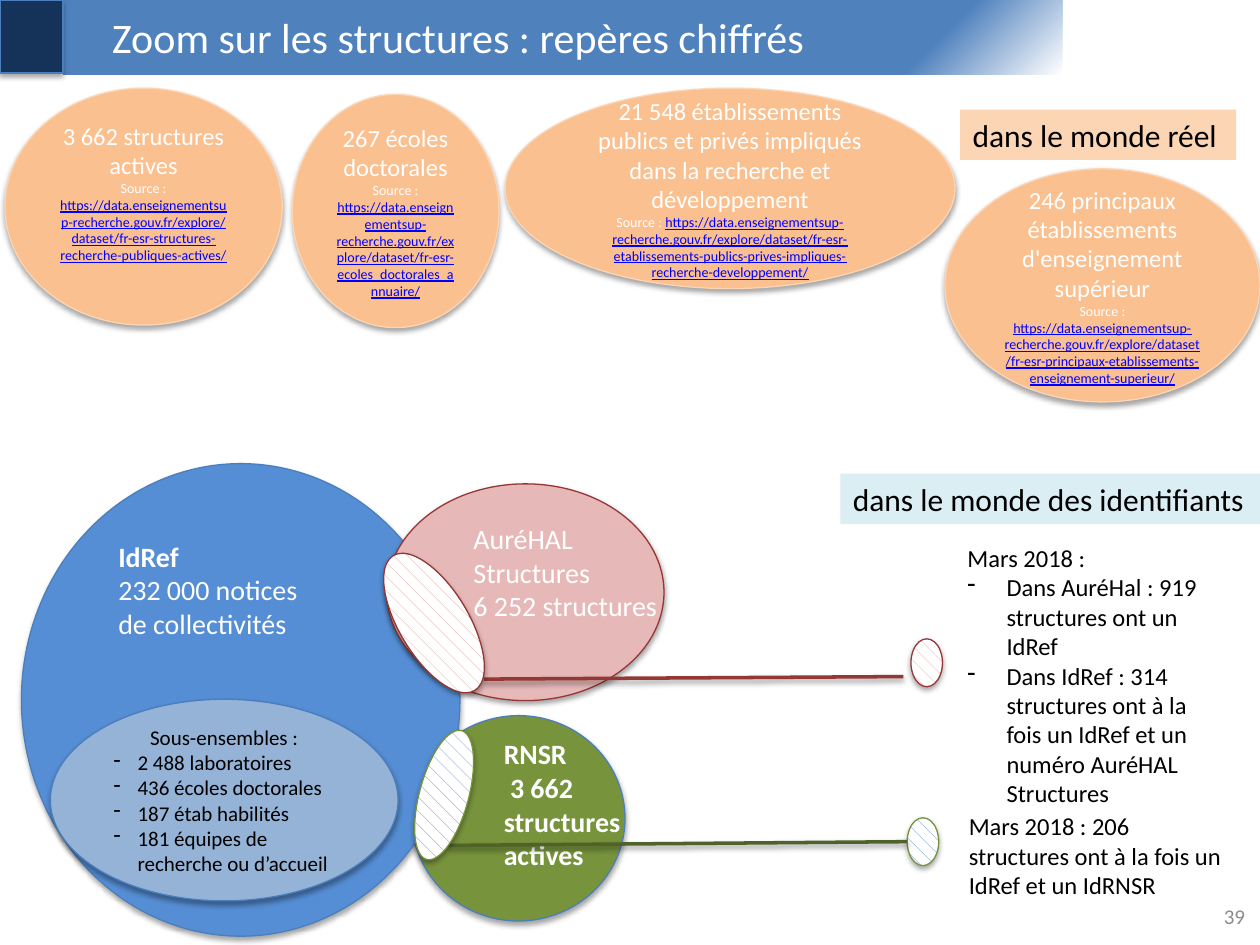
"""Build the slide on research structures: real-world counts against identifier counts."""
from dataclasses import dataclass

from lxml.etree import SubElement
from pptx import Presentation
from pptx.dml.color import RGBColor
from pptx.enum.dml import MSO_PATTERN
from pptx.enum.shapes import MSO_CONNECTOR, MSO_SHAPE
from pptx.enum.text import MSO_ANCHOR, PP_ALIGN
from pptx.oxml.ns import qn
from pptx.util import Inches, Pt


@dataclass(frozen=True)
class Theme:
    font: str = "Calibri"
    white: str = "FFFFFF"
    black: str = "000000"
    grey: str = "8C8C8C"
    link: str = "0000FF"
    navy: str = "153258"
    title: str = "4F81BD"
    outline: str = "4B7EBC"
    orange: str = "FAC090"
    peach: str = "FCD5B5"
    aqua: str = "DBEEF4"
    blue: str = "558ED5"
    pale_blue: str = "95B3D7"
    green: str = "77933C"
    dark_green: str = "4F6228"
    pink: str = "E6B9B8"
    rose: str = "D99694"
    red: str = "953735"
    sz_title: int = 24
    sz_label: int = 18
    sz_set: int = 16
    sz_body: int = 14
    sz_small: int = 12
    sz_source: int = 8


T = Theme()


@dataclass(frozen=True)
class Box:
    x: float
    y: float
    w: float
    h: float

    def emu(self) -> tuple:
        return tuple(Inches(v) for v in (self.x, self.y, self.w, self.h))


@dataclass(frozen=True)
class Run:
    text: str
    size: int = T.sz_body
    color: str = T.black
    bold: bool = False
    underline: bool = False


@dataclass(frozen=True)
class Para:
    runs: tuple
    align: PP_ALIGN = PP_ALIGN.LEFT
    indent: float = 0


@dataclass(frozen=True)
class Fact:
    box: Box
    text: str
    dataset: str
    one_paragraph: bool = False
    bottom: float = 0.05


FACTS = (
    Fact(Box(0.04, 0.7, 2.2, 1.88), "3 662 structures actives", "structures-recherche-publiques-actives", bottom=0.28),
    Fact(Box(4.01, 0.7, 3.57, 1.59),
         "21 548 établissements publics et privés impliqués dans la recherche et développement",
         "etablissements-publics-prives-impliques-recherche-developpement"),
    Fact(Box(7.5, 1.34, 2.5, 1.85), "246 principaux établissements d'enseignement supérieur",
         "principaux-etablissements-enseignement-superieur"),
    Fact(Box(2.32, 0.75, 1.64, 1.85), "267 écoles doctorales ", "ecoles_doctorales_annuaire", one_paragraph=True),
)
SUBSETS = ("2 488 laboratoires", "436 écoles doctorales", "187 étab habilités",
           "181 équipes de recherche ou d’accueil")
HAL_LINKS = ("Dans AuréHal : 919 structures ont un IdRef",
             "Dans IdRef : 314 structures ont à la fois un IdRef et un numéro AuréHAL Structures")


def rgb(color: str) -> RGBColor:
    return RGBColor.from_string(color)


def add_shadow(sp, dist: float = 1.8, alpha: int = 35) -> None:
    effects = SubElement(sp.element.spPr, qn("a:effectLst"))
    outer = SubElement(effects, qn("a:outerShdw"), blurRad=str(Pt(3.1)), dist=str(Pt(dist)),
                       dir="5400000", rotWithShape="0")
    color = SubElement(outer, qn("a:srgbClr"), val=T.black)
    SubElement(color, qn("a:alpha"), val=str(alpha * 1000))


def write(tf, paras: list, anchor: MSO_ANCHOR = MSO_ANCHOR.TOP) -> None:
    tf.word_wrap = True
    tf.vertical_anchor = anchor
    for i, para in enumerate(paras):
        p = tf.add_paragraph() if i else tf.paragraphs[0]
        p.alignment = para.align
        if para.indent:
            pPr = p._p.get_or_add_pPr()
            pPr.set("marL", str(Inches(para.indent)))
            pPr.set("indent", str(-Inches(para.indent)))
            SubElement(pPr, qn("a:buChar"), char="-")
        for run in para.runs:
            r = p.add_run()
            r.text = run.text
            r.font.name, r.font.size = T.font, Pt(run.size)
            r.font.bold, r.font.underline = run.bold, run.underline
            r.font.color.rgb = rgb(run.color)


def add_solid(s, box: Box, fill: str, line: str, shape: MSO_SHAPE = MSO_SHAPE.OVAL):
    sp = s.shapes.add_shape(shape, *box.emu())
    sp.fill.solid()
    sp.fill.fore_color.rgb = rgb(fill)
    sp.line.color.rgb = rgb(line)
    sp.line.width = Pt(0.75)
    add_shadow(sp)
    return sp


def add_hatched(s, box: Box, hatch: str, line: str, rotation: float = 0) -> None:
    sp = add_solid(s, box, T.white, line)
    sp.fill.patterned()
    sp.fill.pattern = MSO_PATTERN.SHINGLE
    sp.fill.fore_color.rgb, sp.fill.back_color.rgb = rgb(hatch), rgb(T.white)
    sp.rotation = rotation


def add_text(s, box: Box, paras: list, fill: str = "", anchor: MSO_ANCHOR = MSO_ANCHOR.TOP) -> None:
    tb = s.shapes.add_textbox(*box.emu())
    if fill:
        tb.fill.solid()
        tb.fill.fore_color.rgb = rgb(fill)
    write(tb.text_frame, paras, anchor)


def add_leader(s, x1: float, y1: float, x2: float, y2: float, color: str) -> None:
    cx = s.shapes.add_connector(MSO_CONNECTOR.STRAIGHT, *(Inches(v) for v in (x1, y1, x2, y2)))
    cx.line.color.rgb = rgb(color)
    cx.line.width = Pt(2)
    add_shadow(cx, 1.6, 38)


def add_fact(s, fact: Fact) -> None:
    sp = add_solid(s, fact.box, T.orange, T.peach)
    url = f"https://data.enseignementsup-recherche.gouv.fr/explore/dataset/fr-esr-{fact.dataset}/"
    head = (Run(fact.text, color=T.white),)
    source = (Run("Source : ", T.sz_source, T.white), Run(url, T.sz_source, T.link, underline=True))
    groups = [head + source] if fact.one_paragraph else [head, source]
    sp.text_frame.margin_bottom = Inches(fact.bottom)
    write(sp.text_frame, [Para(g, PP_ALIGN.CENTER) for g in groups], MSO_ANCHOR.MIDDLE)


def add_title(s, text: str) -> None:
    sp = s.shapes.title
    sp.left, sp.top, sp.width, sp.height = Box(0.5, 0, 7.93, 0.59).emu()
    sp.fill.gradient()
    sp.fill.gradient_angle = 135
    for stop, color, position in zip(sp.fill.gradient_stops, (T.white, T.title), (0, 0.15)):
        stop.color.rgb, stop.position = rgb(color), position
    sp.text_frame.margin_left = Inches(0.39)
    write(sp.text_frame, [Para((Run(text, T.sz_title, T.white),))], MSO_ANCHOR.MIDDLE)


def set_lines(*lines: str, bold: tuple = ()) -> list:
    return [Para((Run(t, T.sz_set, T.white, i in bold),)) for i, t in enumerate(lines)]


def main() -> None:
    prs = Presentation()
    prs.slide_width, prs.slide_height = Inches(10), Inches(7.5)
    s = prs.slides.add_slide(prs.slide_layouts[5])
    add_title(s, "Zoom sur les structures : repères chiffrés")
    add_solid(s, Box(0, 0, 0.5, 0.58), T.navy, T.outline, MSO_SHAPE.RECTANGLE)
    add_text(s, Box(9.5, 7.07, 0.48, 0.4), [Para((Run("39", T.sz_small, T.grey),), PP_ALIGN.RIGHT)],
             anchor=MSO_ANCHOR.MIDDLE)

    add_solid(s, Box(3.27, 5.68, 1.69, 1.63), T.green, T.outline)
    add_solid(s, Box(0.17, 3.68, 3.48, 3.75), T.blue, T.outline)
    add_text(s, Box(0.84, 4.23, 1.79, 0.91), set_lines("IdRef", "232 000 notices de collectivités", bold=(0,)))
    add_text(s, Box(3.9, 5.8, 1.26, 1.18), set_lines("RNSR", " 3 662 structures actives", bold=(0, 1)))
    add_hatched(s, Box(7.2, 6.49, 0.25, 0.38), T.title, T.green)
    add_leader(s, 3.56, 6.71, 7.2, 6.68, T.dark_green)
    add_text(s, Box(7.59, 6.39, 2.22, 1.04),
             [Para((Run("Mars 2018 : 206 structures ont à la fois un IdRef et un IdRNSR"),))])
    add_hatched(s, Box(3.33, 5.78, 0.39, 1.06), T.title, T.green, 15.2)

    add_solid(s, Box(3.07, 3.84, 2.2, 1.72), T.pink, T.red)
    add_text(s, Box(3.66, 4.09, 1.73, 0.91), set_lines("AuréHAL", "Structures", "6 252 structures"))
    add_hatched(s, Box(7.23, 5.07, 0.25, 0.38), T.rose, T.red)
    add_leader(s, 3.84, 5.39, 7.17, 5.37, T.red)
    add_hatched(s, Box(3.17, 4.32, 0.55, 1.25), T.rose, T.red, 328.9)
    add_text(s, Box(7.58, 4.26, 2.22, 2.22),
             [Para((Run("Mars 2018 :"),))] + [Para((Run(t),), indent=0.31) for t in HAL_LINKS])

    subsets = add_solid(s, Box(0.4, 5.55, 2.76, 1.6), T.pale_blue, T.outline)
    write(subsets.text_frame,
          [Para((Run("Sous-ensembles :", T.sz_small),), PP_ALIGN.CENTER)]
          + [Para((Run(t, T.sz_small),), indent=0.19) for t in SUBSETS], MSO_ANCHOR.MIDDLE)

    for fact in FACTS:
        add_fact(s, fact)
    for box, text, fill in ((Box(7.62, 0.87, 2.19, 0.4), "dans le monde réel", T.peach),
                            (Box(6.67, 3.76, 3.33, 0.4), "dans le monde des identifiants", T.aqua)):
        add_text(s, box, [Para((Run(text, T.sz_label),))], fill)
    prs.save("out.pptx")


if __name__ == "__main__":
    main()
